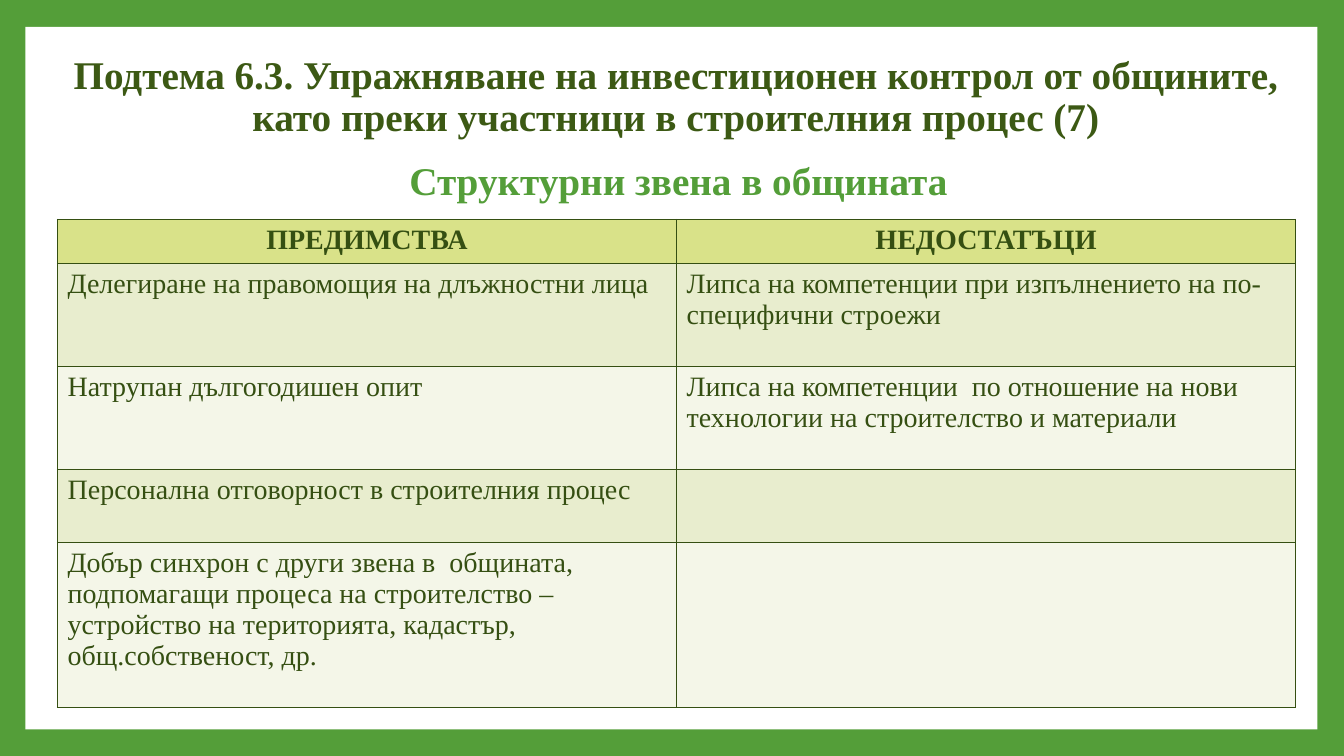
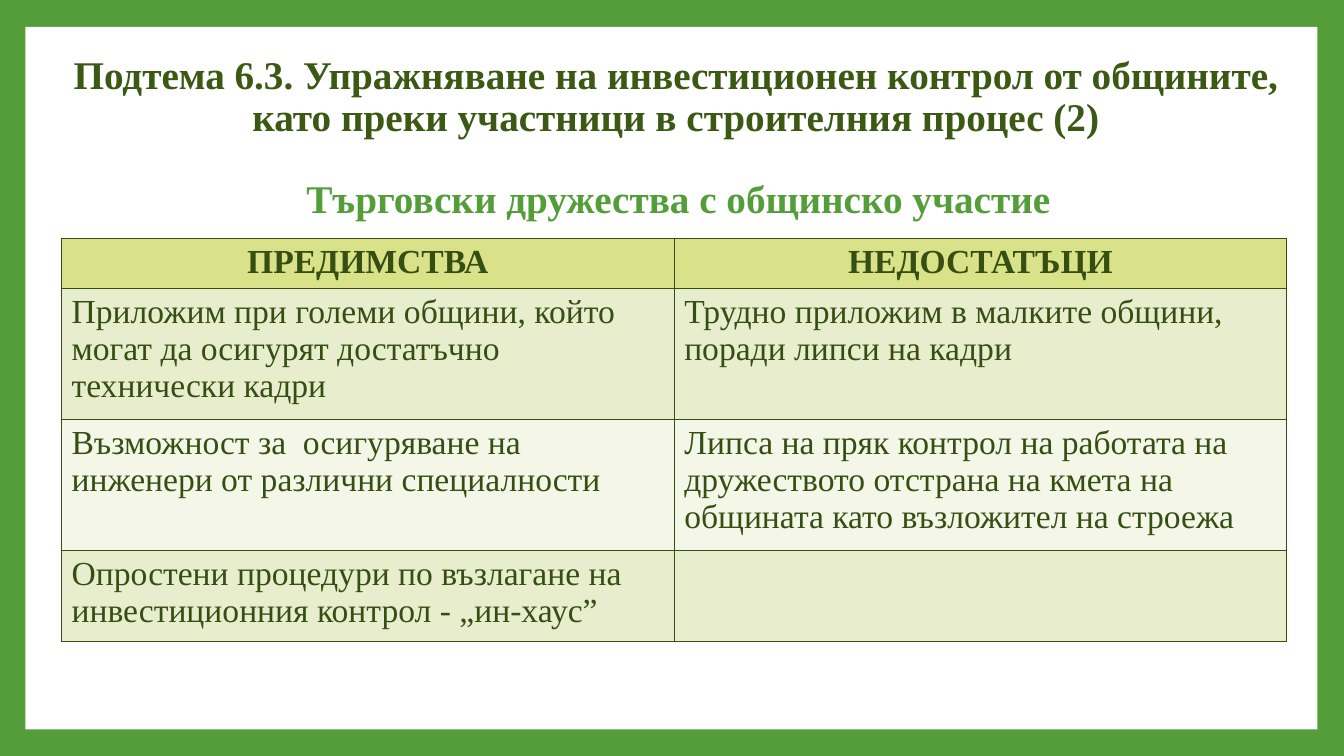
import dataclasses

import lxml.etree
import pptx
import pptx.dml.color
import pptx.enum.shapes
import pptx.enum.text
import pptx.oxml.ns
import pptx.util
from pptx.util import Cm

COLORS = {
    "green": "549E39",
    "white": "FFFFFF",
    "title": "3C5914",
    "text": "354F12",
    "header": "D9E289",
    "odd": "E8EDCE",
    "even": "F4F6E8",
}
FONT = "Times New Roman"
CENTER = pptx.enum.text.PP_ALIGN.CENTER
LEFT = pptx.enum.text.PP_ALIGN.LEFT
HEADINGS = ("ПРЕДИМСТВА", "НЕДОСТАТЪЦИ")
TITLE = ("Подтема 6.3. Упражняване на инвестиционен контрол от общините, "
         "като преки участници в строителния процес ({})")


@dataclasses.dataclass
class Comparison:
    """One slide weighing advantages against disadvantages; lengths in cm."""
    number: int
    subtitle: str
    subtitle_top: float
    table_left: float
    table_top: float
    column_width: float
    font_size: int
    row_heights: list[float]
    rows: list[tuple[str, str]]


COMPARISONS = [
    Comparison(
        7, "Структурни звена в общината", 3.94, 1.45, 5.53, 15.6, 20,
        [1.03, 2.6, 2.6, 1.83, 4.16],
        [("Делегиране на правомощия на длъжностни лица",
          "Липса на компетенции при изпълнението на по-специфични строежи"),
         ("Натрупан дългогодишен опит",
          "Липса на компетенции  по отношение на нови технологии "
          "на строителство и материали"),
         ("Персонална отговорност в строителния процес", ""),
         ("Добър синхрон с други звена в  общината, подпомагащи процеса "
          "на строителство – устройство на територията, кадастър, "
          "общ.собственост, др.", "")]),
    Comparison(
        2, "Търговски дружества с общинско участие", 4.39, 1.55, 6, 15.44, 24,
        [1.19, 3.06, 3.07, 2.12],
        [("Приложим при големи общини, който могат да осигурят "
          "достатъчно технически кадри",
          "Трудно приложим в малките общини, поради липси на кадри"),
         ("Възможност за  осигуряване на инженери от различни специалности",
          "Липса на пряк контрол на работата на дружеството отстрана "
          "на кмета на общината като възложител на строежа"),
         ("Опростени процедури по възлагане на инвестиционния контрол "
          "- „ин-хаус”", "")]),
]


def rgb(name: str) -> pptx.dml.color.RGBColor:
    return pptx.dml.color.RGBColor.from_string(COLORS[name])


def paint(fill, name: str) -> None:
    fill.solid()
    fill.fore_color.rgb = rgb(name)


def write(para, text: str, size: int, color: str, bold: bool, align) -> None:
    para.text = text
    para.alignment = align
    para.font.name = FONT
    para.font.size = pptx.util.Pt(size)
    para.font.bold = bold
    para.font.color.rgb = rgb(color)


def add_frame(page) -> None:
    panel = page.shapes.add_shape(pptx.enum.shapes.MSO_SHAPE.RECTANGLE,
                                  Cm(0.64), Cm(0.68), Cm(32.56), Cm(17.7))
    panel.shadow.inherit = False
    paint(panel.fill, "white")
    panel.line.fill.background()


def add_heading(page, text: str, top: float, height: float, color: str):
    box = page.shapes.add_textbox(Cm(1.04), Cm(top), Cm(31.98), Cm(height))
    frame = box.text_frame
    frame.word_wrap = True
    para = frame.paragraphs[0]
    write(para, text, 28, color, True, CENTER)
    para.line_spacing = 0.9
    return frame


def add_borders(cell) -> None:
    properties = cell._tc.get_or_add_tcPr()
    qn = pptx.oxml.ns.qn
    for position, side in enumerate(("lnL", "lnR", "lnT", "lnB")):
        line = lxml.etree.Element(qn(f"a:{side}"), w=str(pptx.util.Pt(1)))
        fill = lxml.etree.SubElement(line, qn("a:solidFill"))
        lxml.etree.SubElement(fill, qn("a:srgbClr"), val=COLORS["text"])
        properties.insert(position, line)


def add_table(page, item: Comparison) -> None:
    rows = [HEADINGS, *item.rows]
    table = page.shapes.add_table(
        len(rows), len(HEADINGS), Cm(item.table_left), Cm(item.table_top),
        Cm(item.column_width * len(HEADINGS)), Cm(sum(item.row_heights))).table
    for column in table.columns:
        column.width = Cm(item.column_width)
    for index, (texts, height) in enumerate(zip(rows, item.row_heights)):
        table.rows[index].height = Cm(height)
        is_header = index == 0
        band = "header" if is_header else "odd" if index % 2 else "even"
        for cell, text in zip(table.rows[index].cells, texts):
            paint(cell.fill, band)
            add_borders(cell)
            write(cell.text_frame.paragraphs[0], text, item.font_size, "text",
                  is_header, CENTER if is_header else LEFT)


def add_comparison(deck, item: Comparison) -> None:
    page = deck.slides.add_slide(deck.slide_layouts[6])
    add_frame(page)
    # Title and subtitle
    title = add_heading(page, TITLE.format(item.number), 0.99, 2.95, "title")
    title.vertical_anchor = pptx.enum.text.MSO_ANCHOR.MIDDLE
    subtitle = add_heading(page, item.subtitle, item.subtitle_top, 1.4, "green")
    subtitle.margin_left = Cm(0.38)
    # Advantages and disadvantages
    add_table(page, item)


def main() -> None:
    deck = pptx.Presentation()
    deck.slide_width, deck.slide_height = Cm(33.87), Cm(19.05)
    paint(deck.slide_master.background.fill, "green")
    for item in COMPARISONS:
        add_comparison(deck, item)
    deck.save("out.pptx")


if __name__ == "__main__":
    main()
